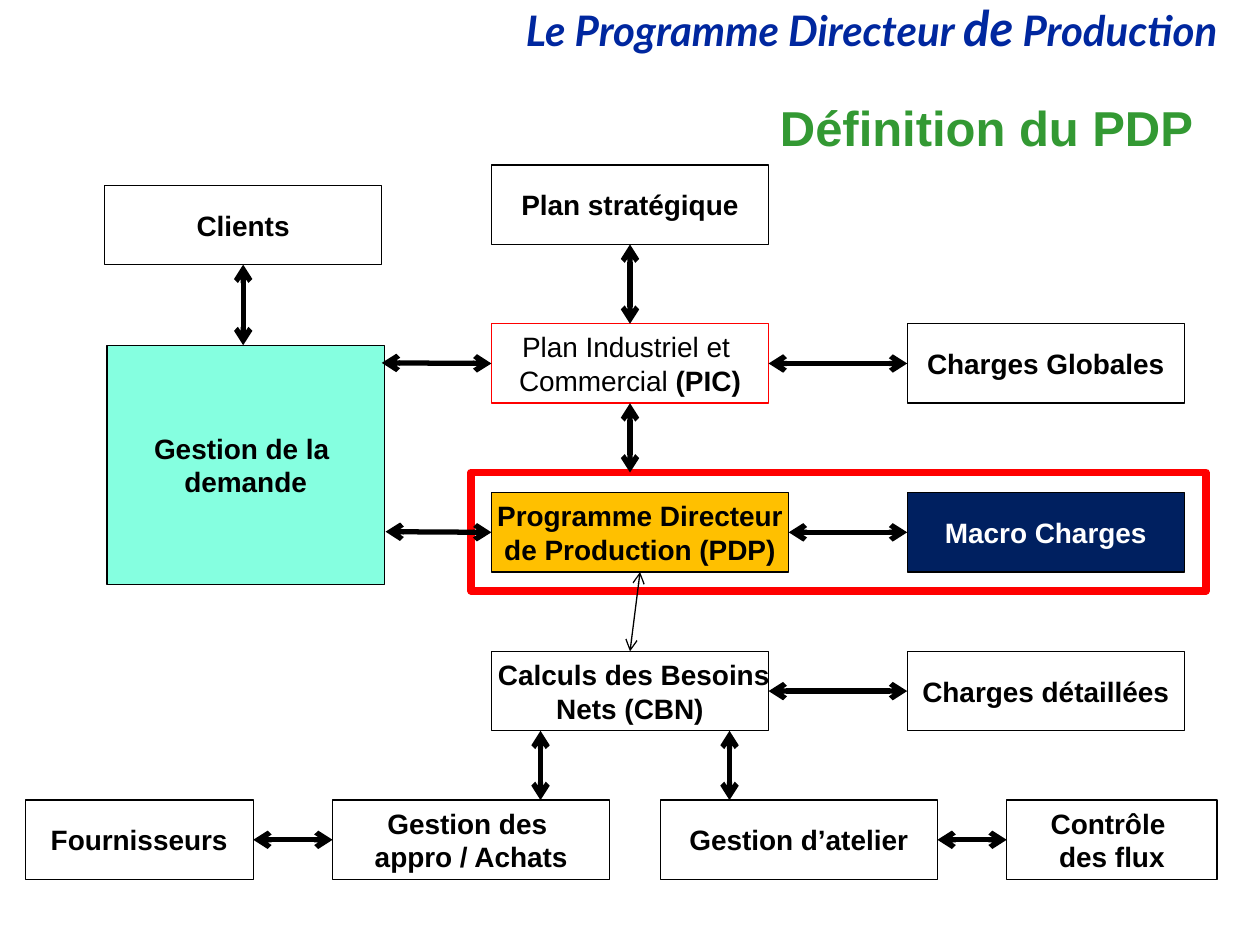
from lxml.etree import SubElement
from pptx import Presentation
from pptx.dml.color import RGBColor
from pptx.enum.shapes import MSO_CONNECTOR, MSO_SHAPE
from pptx.enum.text import MSO_ANCHOR, PP_ALIGN
from pptx.oxml.ns import qn
from pptx.util import Pt

PX = 9144
COLORS = {"ink": "000000", "white": "FFFFFF", "red": "FF0000", "blue": "00279F",
          "green": "339933", "gold": "FFC000", "navy": "002060", "mint": "85FFE0"}
TOP, LEFT, BOTTOM, RIGHT = range(4)
WIDE, HIGH = 220, 63


def color(name):
    """Return the named colour."""
    return RGBColor.from_string(COLORS[name])


def style(run, size, tint, bold=True, face="Arial", italic=False):
    """Format one run of text."""
    font = run.font
    font.name, font.size, font.bold, font.italic = face, Pt(size), bold, italic
    font.color.rgb = color(tint)


def place(shape, x, y, w, h):
    """Move a shape to a place given in px."""
    shape.left, shape.top, shape.width, shape.height = [n * PX for n in (x, y, w, h)]


def node(slide, x, y, text="", w=WIDE, h=HIGH, fill=None, line="ink", width=0.75, tint="ink"):
    """Draw a rectangle with centred bold text."""
    box = slide.shapes.add_shape(MSO_SHAPE.RECTANGLE, x * PX, y * PX, w * PX, h * PX)
    box.shadow.inherit = False
    if fill:
        box.fill.solid()
        box.fill.fore_color.rgb = color(fill)
    else:
        box.fill.background()
    box.line.color.rgb = color(line)
    box.line.width = Pt(width)
    frame = box.text_frame
    frame.word_wrap = False
    frame.vertical_anchor = MSO_ANCHOR.MIDDLE
    if text:
        frame.text = text
    for para in frame.paragraphs:
        para.alignment = PP_ALIGN.CENTER
        for run in para.runs:
            style(run, 16, tint)
    return box


def link(slide, start, end, width=3):
    """Draw a double arrow between points or (shape, side) pairs."""
    ends = [[n * PX for n in spot] if isinstance(spot[0], int) else [0, 0]
            for spot in (start, end)]
    arrow = slide.shapes.add_connector(MSO_CONNECTOR.STRAIGHT, *ends[0], *ends[1])
    for spot, join in ((start, arrow.begin_connect), (end, arrow.end_connect)):
        if not isinstance(spot[0], int):
            join(*spot)
    arrow.line.color.rgb = color("ink")
    arrow.line.width = Pt(width)
    line = arrow.line._get_or_add_ln()
    for tag in ("a:headEnd", "a:tailEnd"):
        SubElement(line, qn(tag), type="arrow")
    SubElement(arrow._element.spPr, qn("a:effectLst"))


def header(slide, x, y):
    """Place the course banner and the slide title."""
    banner = slide.shapes.add_textbox(0, 0, PX, PX)
    place(banner, x + 26, y, 808, 52)
    banner.text_frame.word_wrap = True
    para = banner.text_frame.paragraphs[0]
    para.alignment = PP_ALIGN.RIGHT
    para.line_spacing = 0.9
    for text, size in (("Le Programme Directeur ", 24), ("de", 28), (" Production", 24)):
        run = para.add_run()
        run.text = text
        style(run, size, "blue", face="Lato", italic=True)
    title = slide.shapes.title
    place(title, x, y + 69, 825, 67)
    frame = title.text_frame
    frame.text = "Définition du PDP "
    frame.vertical_anchor = MSO_ANCHOR.MIDDLE
    frame.paragraphs[0].alignment = PP_ALIGN.RIGHT
    style(frame.paragraphs[0].runs[0], 28, "green")


def demand(slide, x, y):
    """Draw the customer side."""
    client = node(slide, x, y, "Clients")
    node(slide, x + 2, y + 127, "Gestion de la \ndemande", h=190, fill="mint")
    link(slide, (client, BOTTOM), (x + 110, y + 127))


def plans(slide, x, y):
    """Draw the planning levels with their loads."""
    side = x + 330
    rows = [y + 126, y + 260, y + 386]
    goal = node(slide, x, y, "Plan stratégique")
    pic = node(slide, x, rows[0], "Plan Industriel et \nCommercial (PIC)", line="red")
    first, last = pic.text_frame.paragraphs
    last.runs[0].text = "Commercial"
    tag = last.add_run()
    tag.text = " (PIC)"
    style(tag, 16, "ink")
    for para in (first, last):
        para.runs[0].font.bold = False
    pdp = node(slide, x, rows[1], " Programme Directeur \nde Production (PDP)", w=236, fill="gold")
    cbn = node(slide, x, rows[2], "  Calculs des Besoins \nNets (CBN)")
    loads = [node(slide, side, rows[0], "Charges Globales"),
             node(slide, side, rows[1], "Macro Charges", fill="navy", tint="white"),
             node(slide, side, rows[2], "Charges détaillées")]
    node(slide, x - 16, y + 244, w=583, h=94, line="red", width=4.5)
    link(slide, (goal, BOTTOM), (pic, TOP))
    link(slide, (pic, BOTTOM), (x + 110, y + 244))
    link(slide, (pic, LEFT), (x - 87, y + 157))
    link(slide, (pdp, LEFT), (x - 84, y + 291))
    link(slide, (cbn, TOP), (pdp, BOTTOM), 0.75)
    for plan, load in zip((pic, pdp, cbn), loads):
        link(slide, (plan, RIGHT), (load, LEFT))


def shop(slide, x, y):
    """Draw the execution row and its links upwards."""
    source = node(slide, x, y, "Fournisseurs", w=181)
    buy = node(slide, x + 244, y, "Gestion des \nappro / Achats")
    work = node(slide, x + 504, y, "Gestion d’atelier")
    flow = node(slide, x + 779, y, "Contrôle \ndes flux", w=167)
    for mid in (x + 409, x + 559):
        link(slide, (mid, y), (mid, y - 55))
    for one, two in ((source, buy), (work, flow)):
        link(slide, (one, RIGHT), (two, LEFT))


def main():
    """Build and save the slide."""
    deck = Presentation()
    deck.slide_width, deck.slide_height = 1000 * PX, 750 * PX
    slide = deck.slides.add_slide(deck.slide_layouts[5])
    header(slide, 142, -2)
    demand(slide, 83, 147)
    plans(slide, 390, 131)
    shop(slide, 20, 635)
    deck.save("out.pptx")


if __name__ == "__main__":
    main()
